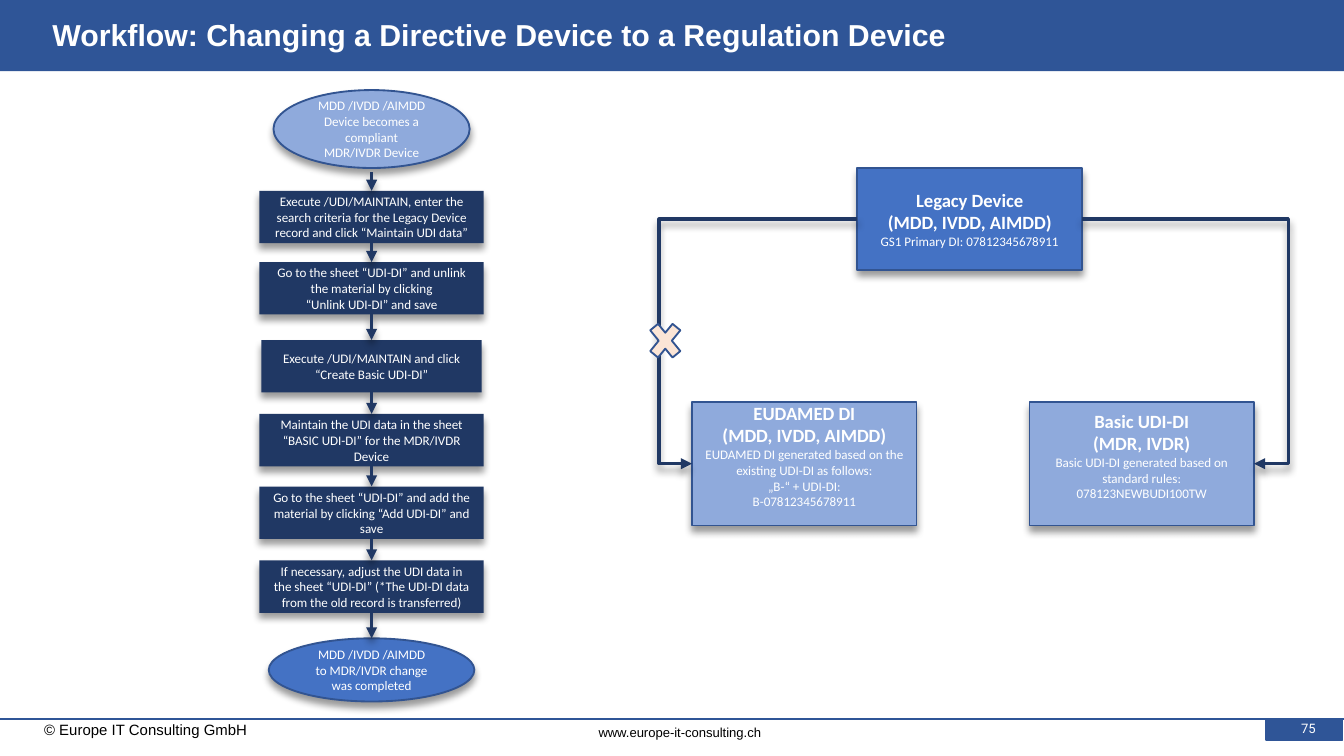
from lxml import etree
from pptx import Presentation
from pptx import util as u
from pptx.dml.color import RGBColor
from pptx.enum import shapes, text
from pptx.oxml.ns import qn

NAVY, BLUE, MID, PALE, EDGE, WHITE = "203864", "2F5597", "4472C4", "8FAADC", "325491", "FFFFFF"
KIND = shapes.MSO_SHAPE
SIDE = text.PP_ALIGN
TOP, LEFT, BASE, RIGHT = range(4)


def tint(color, code):
    """Give a fill, line or font colour the hex code."""
    color.rgb = RGBColor.from_string(code)


def node(parent, tag, **attrs):
    """Append one XML element with its attributes."""
    return etree.SubElement(parent, qn(tag), {k: str(v) for k, v in attrs.items()})


def shade(props):
    """Cast a soft shadow straight down."""
    effect = props.find(qn("a:effectLst"))
    if effect is None:
        effect = node(props, "a:effectLst")
    cast = node(effect, "a:outerShdw", blurRad=u.Pt(4), dist=u.Pt(3), dir=5400000, algn="t", rotWithShape=0)
    node(node(cast, "a:srgbClr", val="000000"), "a:alpha", val=40000)


def write(frame, lines, font="Calibri", color=WHITE, align=SIDE.CENTER):
    """Write one paragraph for each (text, size, bold) line."""
    frame.word_wrap = True
    frame.vertical_anchor = text.MSO_ANCHOR.MIDDLE
    for i, (words, size, bold) in enumerate(lines):
        para = frame.paragraphs[0] if i == 0 else frame.add_paragraph()
        para.alignment = align
        run = para.add_run()
        run.text = words
        run.font.name, run.font.size, run.font.bold = font, u.Pt(size), bold
        tint(run.font.color, color)


def block(slide, kind, box, fill, edge=None, lines=(), cast=True):
    """Draw a filled shape with optional outline, text and shadow."""
    part = slide.shapes.add_shape(kind, *map(u.Inches, box))
    part.shadow.inherit = False
    part.fill.solid()
    tint(part.fill.fore_color, fill)
    if edge:
        tint(part.line.color, edge)
        part.line.width = u.Pt(1)
    else:
        part.line.fill.background()
    if cast:
        shade(part.element.spPr)
    write(part.text_frame, lines)
    return part


def label(slide, box, words, size, font, color, align):
    """Place a one-line text box."""
    part = slide.shapes.add_textbox(*map(u.Inches, box))
    write(part.text_frame, [(words, size, False)], font, color, align)


def link(slide, kind, start, end, color=NAVY, width=1.75, arrow=True):
    """Draw a connector, with arrowhead and shadow if it is an arrow."""
    line = slide.shapes.add_connector(kind, *map(u.Inches, start + end))
    tint(line.line.color, color)
    line.line.width = u.Pt(width)
    if arrow:
        node(line.line._get_or_add_ln(), "a:tailEnd", type="triangle")
        shade(line.element.spPr)
    else:
        node(line.element.spPr, "a:effectLst")
    return line


def header(slide, box):
    """Draw the title band and set the title on it."""
    x, y, w, h = box
    title = slide.shapes.title
    band = block(slide, KIND.RECTANGLE, box, BLUE, cast=False)
    title.element.addprevious(band.element)
    title.left, title.top, title.width, title.height = map(u.Inches, (x + 0.29, y + 0.12, 8.65, 0.36))
    write(title.text_frame, [("Workflow: Changing a Directive Device to a Regulation Device", 16.2, True)],
          "Arial", WHITE, SIDE.LEFT)
    title.text_frame.auto_size = text.MSO_AUTO_SIZE.NONE
    title.text_frame.paragraphs[0].line_spacing = 0.9


def footer(slide, box):
    """Draw the rule, page number and the two footer lines."""
    x, y, w, h = box
    block(slide, KIND.RECTANGLE, (x + 9.42, y, 0.57, 0.16), BLUE, BLUE, cast=False)
    label(slide, (x + 9.42, y - 0.03, 0.63, 0.2), "75", 7, "Roboto", WHITE, SIDE.CENTER)
    link(slide, shapes.MSO_CONNECTOR.STRAIGHT, (x, y), (x + w, y), BLUE, 1.5, False)
    label(slide, (x + 0.1, y - 0.01, 1.84, 0.18), "© Europe IT Consulting GmbH", 8, "Arial", "000000", SIDE.RIGHT)
    label(slide, (x + 4.24, y + 0.02, 1.52, 0.16), "www.europe-it-consulting.ch", 7, "Arial", "000000", SIDE.RIGHT)


def flow(slide, box):
    """Draw the chain of steps between its two ovals."""
    x, y, w, h = box
    mid, deep = x + w / 2, 0.39
    steps = [
        (0.75, w, ["Execute /UDI/MAINTAIN, enter the search criteria for the Legacy Device record "
                   "and click “Maintain UDI data”"]),
        (1.28, w, ["Go to the sheet “UDI-DI” and unlink the material by clicking", "“Unlink UDI-DI” and save"]),
        (1.86, 1.64, ["Execute /UDI/MAINTAIN and click “Create Basic UDI-DI”"]),
        (2.41, w, ["Maintain the UDI data in the sheet “BASIC UDI-DI” for the MDR/IVDR Device"]),
        (2.95, w, ["Go to the sheet “UDI-DI” and add the material by clicking “Add UDI-DI” and save"]),
        (3.5, w, ["If necessary, adjust the UDI data in the sheet “UDI-DI” (*The UDI-DI data from "
                  "the old record is transferred)"]),
    ]
    ends = [(0, 1.46, 0.58, PALE, "MDD /IVDD /AIMDD Device becomes a compliant MDR/IVDR Device"),
            (h - 0.47, 1.53, 0.47, MID, "MDD /IVDD /AIMDD to MDR/IVDR change was completed")]
    boxes = [block(slide, KIND.RECTANGLE, (mid - wide / 2, y + top, wide, deep), NAVY,
                   lines=[(words, 7, False) for words in lines]) for top, wide, lines in steps]
    for top, wide, tall, fill, words in ends:
        block(slide, KIND.FLOWCHART_CONNECTOR, (mid - wide / 2, y + top, wide, tall), fill, EDGE, [(words, 7, False)])
    starts = [0.61] + [top + deep for top, _, _ in steps]
    stops = [top for top, _, _ in steps] + [h - 0.47]
    for start, stop, above, below in zip(starts, stops, [None] + boxes, boxes + [None]):
        line = link(slide, shapes.MSO_CONNECTOR.STRAIGHT, (mid, y + start), (mid, y + stop))
        if above:
            line.begin_connect(above, BASE)
        if below:
            line.end_connect(below, TOP)


def split(slide, box):
    """Draw the legacy device and the two records it leads to."""
    x, y, w, h = box
    wide, tall, low = 1.67, 0.76, 0.92
    cards = [
        (0.25, h - low, low, PALE, ["EUDAMED DI", "(MDD, IVDD, AIMDD)"],
         ["EUDAMED DI generated based on the existing UDI-DI as follows:", "„B-“ + UDI-DI:", "B-07812345678911"]),
        (1.48, 0, tall, MID, ["Legacy Device", "(MDD, IVDD, AIMDD)"], ["GS1 Primary DI: 07812345678911"]),
        (2.76, h - low, low, PALE, ["Basic UDI-DI", "(MDR, IVDR)"],
         ["Basic UDI-DI generated based on standard rules:", "078123NEWBUDI100TW"]),
    ]
    for left, top, high, fill, heads, notes in cards:
        lines = [(head, 10, True) for head in heads] + [(note, 7, False) for note in notes]
        card = block(slide, KIND.RECTANGLE, (x + left, y + top, wide, high), fill, EDGE, lines)
        if fill == PALE:
            card.text_frame.margin_top, card.text_frame.margin_bottom = 0, u.Inches(0.12)
    high, deep = y + tall / 2, y + h - low / 2
    for start, stop in [(1.48 + wide, 2.76 + wide), (1.48, 0.25)]:
        line = link(slide, shapes.MSO_CONNECTOR.ELBOW, (x + start, high), (x + stop, deep))
        guides = line.element.spPr.find(qn("a:prstGeom")).get_or_add_avLst()
        node(guides, "a:gd", name="adj1", fmla="val 120000")
    block(slide, KIND.MATH_MULTIPLY, (x - 0.11, y + 1.09, 0.32, 0.39), "FBE5D6", EDGE, cast=False)


def main():
    """Build the slide and save it."""
    deck = Presentation()
    deck.slide_width = u.Inches(10)
    deck.slide_height = deck.slide_width * 9 // 16
    slide = deck.slides.add_slide(deck.slide_layouts[5])
    header(slide, (0, -0.03, 10, 0.56))
    footer(slide, (0, 5.35, 10, 0.27))
    flow(slide, (1.93, 0.67, 1.67, 4.55))
    split(slide, (4.9, 1.25, 4.68, 2.66))
    deck.save("out.pptx")


if __name__ == "__main__":
    main()
